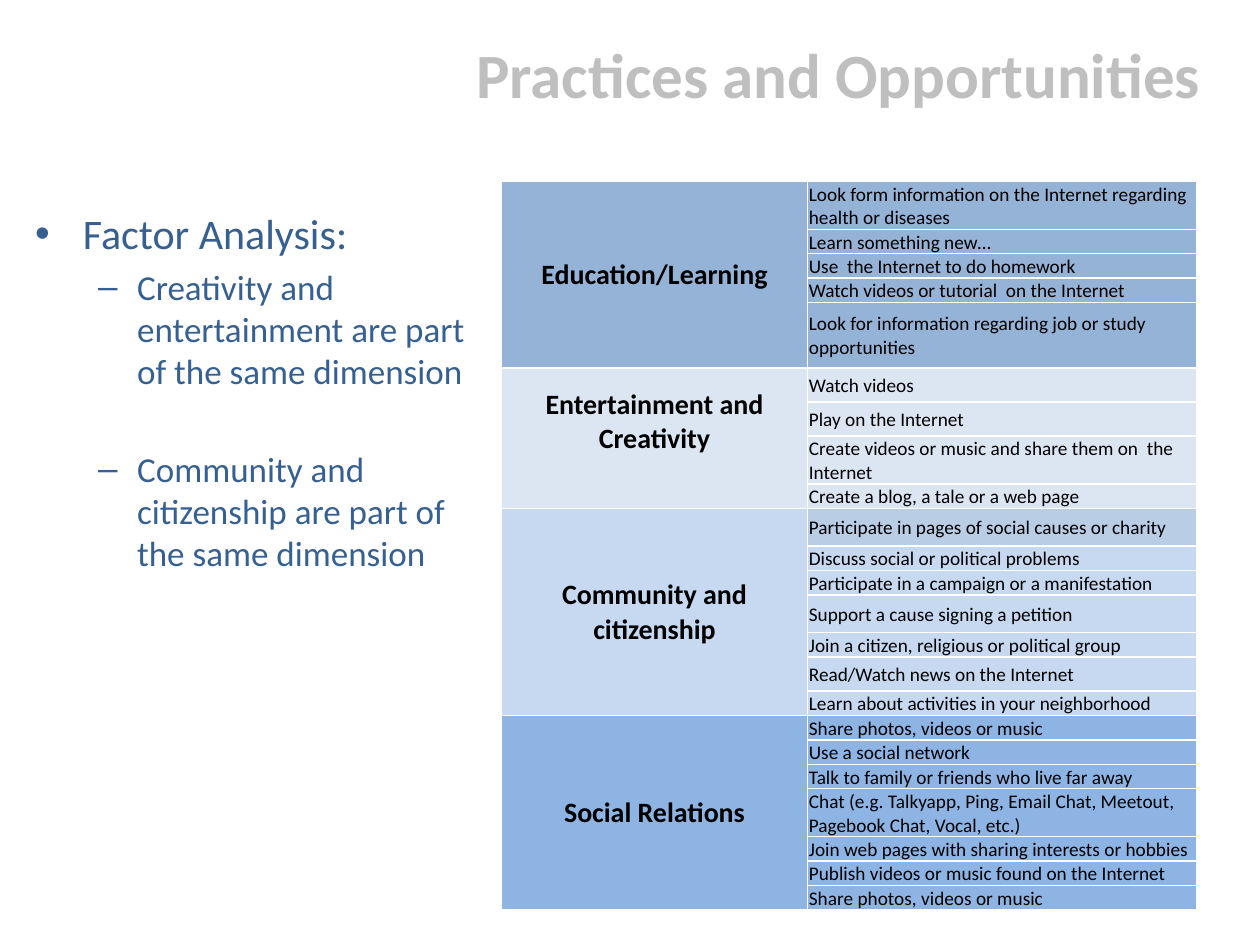
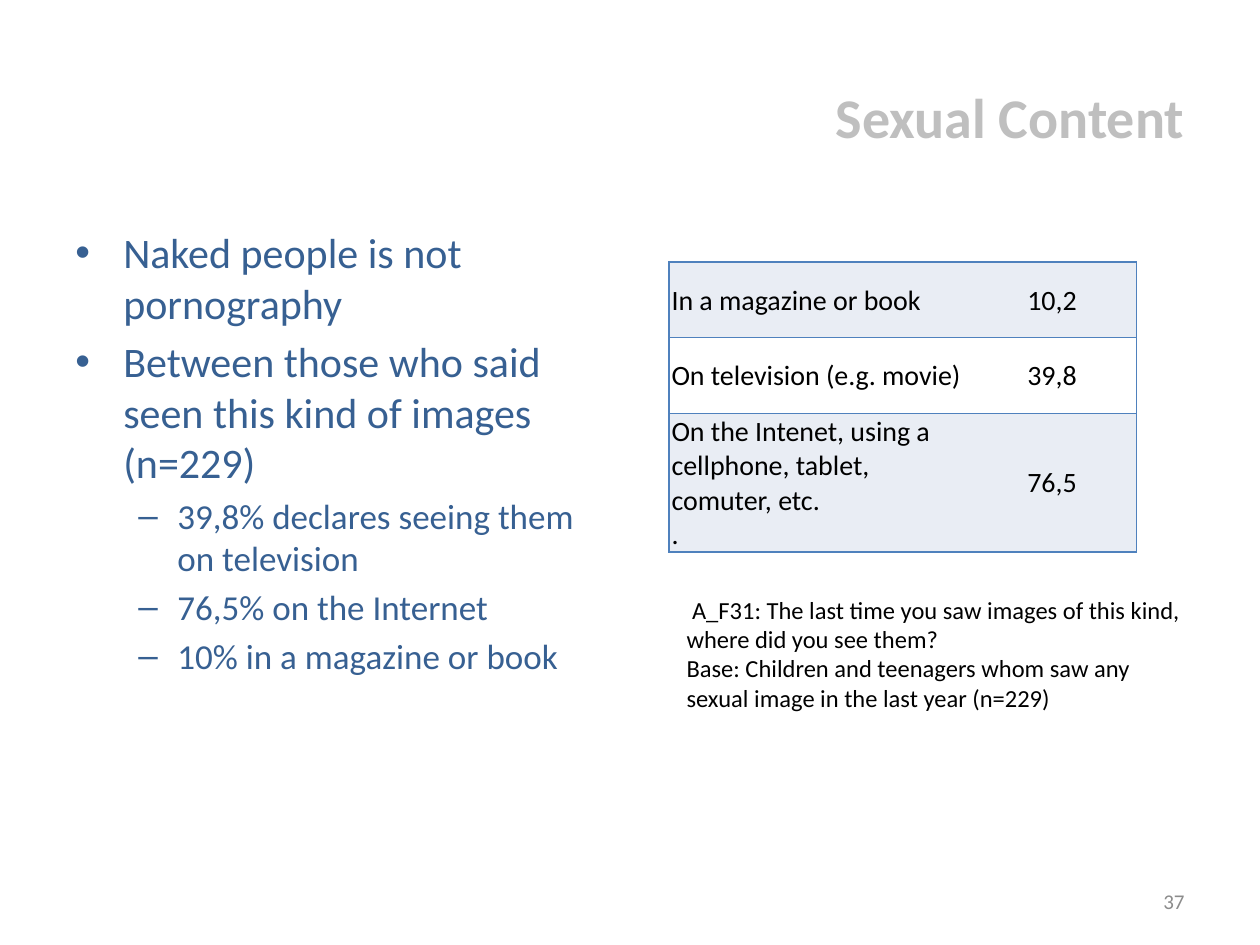
"""Build two slides: a factor analysis table and sources of sexual content."""
import pptx
import pptx.util
import pptx.dml.color
import pptx.enum.text
import pptx.oxml.ns
from lxml import etree

Pt = pptx.util.Pt
RGB = pptx.dml.color.RGBColor.from_string
ALIGN = pptx.enum.text.PP_ALIGN
MIDDLE = pptx.enum.text.MSO_ANCHOR.MIDDLE
BOTTOM = pptx.enum.text.MSO_ANCHOR.BOTTOM

THEME = {
    "font": "Calibri",
    "title": "BFBFBF", "body": "376092", "text": "000000", "number": "8C8C8C",
    "white": "FFFFFF", "line": "4F81BD", "band": "E9EDF4",
    "bullet_sizes": (24, 20), "group_size": 16, "item_size": 11,
    "caption_size": 14, "number_size": 12,
}
BULLETS = (("•", 0.38, 0.38), ("–", 0.81, 0.31))

prs = pptx.Presentation()
prs.slide_width = pptx.util.Inches(10)
prs.slide_height = pptx.util.Inches(7.5)
COL, ROW = prs.slide_width // 100, prs.slide_height // 75


def write(p, text, size, color, bold=False, **paragraph_format):
    """Fill one paragraph with one formatted run."""
    for name, value in paragraph_format.items():
        setattr(p, name, value)
    r = p.add_run()
    r.text = text
    for name, value in {"name": THEME["font"], "size": Pt(size), "bold": bold}.items():
        setattr(r.font, name, value)
    r.font.color.rgb = RGB(color)


def style_cell(cell, fill, inset, borders, anchor=MIDDLE, bottom=0):
    """Set fill, margins and the left, right, top and bottom borders of a cell."""
    cell.fill.solid()
    cell.fill.fore_color.rgb = RGB(fill)
    margins = {"margin_left": inset, "margin_right": inset, "margin_top": 0.01, "margin_bottom": bottom}
    for name, value in margins.items():
        setattr(cell, name, pptx.util.Inches(value))
    cell.vertical_anchor = anchor
    qn = pptx.oxml.ns.qn
    for i, (side, color) in enumerate(zip("LRTB", borders)):
        ln = etree.Element(qn(f"a:ln{side}"), w=str(Pt(1)))
        if color:
            solid = etree.SubElement(ln, qn("a:solidFill"))
            etree.SubElement(solid, qn("a:srgbClr"), val=color)
        else:
            etree.SubElement(ln, qn("a:noFill"))
        cell._tc.get_or_add_tcPr().insert(i, ln)


SLIDES = [
    ("Practices and Opportunities", 36, (14.5, 1.6, 81.8, 8.5), (1.8, 16, 36.1, 47.6), [
        (0, "Factor Analysis:", 0),
        (1, "Creativity and entertainment are part of the same dimension", 0),
        (1, "Community and citizenship are part of the same dimension", 28),
    ]),
    ("Sexual Content", 32, (5, 3, 90, 12.5), (5, 17.5, 43.1, 49.5), [
        (0, "Naked people is not pornography", 0),
        (0, "Between those who said seen this kind of images (n=229)", 0),
        (1, "39,8% declares seeing them on television", 0),
        (1, "76,5% on the Internet", 0),
        (1, "10% in a magazine or book", 0),
    ]),
]

for title, title_size, title_at, body_at, bullets in SLIDES:
    s = prs.slides.add_slide(prs.slide_layouts[5])
    sp = s.shapes.title
    for name, value, unit in zip(("left", "top", "width", "height"), title_at, (COL, ROW) * 2):
        setattr(sp, name, int(value * unit))
    sp.text_frame.vertical_anchor = MIDDLE
    write(sp.text_frame.paragraphs[0], title, title_size, THEME["title"], True, alignment=ALIGN.RIGHT)

    sp = s.shapes.add_textbox(*(int(v * u) for v, u in zip(body_at, (COL, ROW) * 2)))
    tf = sp.text_frame
    tf.word_wrap = True
    for i, (level, text, gap) in enumerate(bullets):
        p = tf.paragraphs[0] if i == 0 else tf.add_paragraph()
        size = THEME["bullet_sizes"][level]
        write(p, text, size, THEME["body"], level=level, space_before=Pt(0.2 * size + gap))
        mark, left, hang = BULLETS[level]
        pPr = p._p.get_or_add_pPr()
        pPr.set("marL", str(pptx.util.Inches(left)))
        pPr.set("indent", str(-pptx.util.Inches(hang)))
        etree.SubElement(pPr, pptx.oxml.ns.qn("a:buFont"), typeface="Arial")
        etree.SubElement(pPr, pptx.oxml.ns.qn("a:buChar"), char=mark)

practices, content = prs.slides

GROUPS = [
    ("Education/Learning", "95B3D7", 0, [
        ("Look form information on the Internet regarding health or diseases", 3.8),
        ("Learn something new…", 1.9),
        ("Use  the Internet to do homework", 1.9),
        ("Watch videos or tutorial  on the Internet", 1.9),
        ("Look for information regarding job or study opportunities", 5.2),
    ]),
    ("Entertainment and Creativity", "DCE6F2", 0.27, [
        ("Watch videos", 2.7),
        ("Play on the Internet", 2.7),
        ("Create videos or music and share them on  the Internet", 3.8),
        ("Create a blog, a tale or a web page", 1.9),
    ]),
    ("Community and citizenship", "C6D9F1", 0, [
        ("Participate in pages of social causes or charity", 3),
        ("Discuss social or political problems", 1.9),
        ("Participate in a campaign or a manifestation", 1.9),
        ("Support a cause signing a petition", 3),
        ("Join a citizen, religious or political group", 1.9),
        ("Read/Watch news on the Internet", 2.7),
        ("Learn about activities in your neighborhood", 1.9),
    ]),
    ("Social Relations", "8EB4E3", 0, [
        ("Share photos, videos or music", 1.9),
        ("Use a social network", 1.9),
        ("Talk to family or friends who live far away", 1.9),
        ("Chat (e.g. Talkyapp, Ping, Email Chat, Meetout, Pagebook Chat, Vocal, etc.)", 3.8),
        ("Join web pages with sharing interests or hobbies", 1.9),
        ("Publish videos or music found on the Internet", 1.9),
        ("Share photos, videos or music", 1.9),
    ]),
]
heights = [height for group in GROUPS for item, height in group[3]]
table = practices.shapes.add_table(
    len(heights), 2, int(39.8 * COL), int(14.4 * ROW), int(55.2 * COL), int(sum(heights) * ROW)).table
table.first_row = table.horz_banding = False
for column, width in zip(table.columns, (24.3, 30.9)):
    column.width = int(width * COL)
white = [THEME["white"]] * 4
row = 0
for group, fill, bottom, items in GROUPS:
    head = table.cell(row, 0)
    head.merge(table.cell(row + len(items) - 1, 0))
    write(head.text_frame.paragraphs[0], group, THEME["group_size"], THEME["text"], True,
          alignment=ALIGN.CENTER)
    for item, height in items:
        table.rows[row].height = int(height * ROW)
        style_cell(table.cell(row, 0), fill, 0.01, white, bottom=bottom)
        cell = table.cell(row, 1)
        style_cell(cell, "B9CDE5" if item.startswith("Participate in pages") else fill, 0.01, white)
        write(cell.text_frame.paragraphs[0], item, THEME["item_size"], THEME["text"])
        row += 1

SOURCES = [
    (["In a magazine or book"], "10,2", 6, THEME["band"], MIDDLE),
    (["On television (e.g. movie)"], "39,8", 6, THEME["white"], MIDDLE),
    (["On the Intenet, using a cellphone, tablet, comuter, etc.", "."], "76,5", 11, THEME["band"], BOTTOM),
]
table = content.shapes.add_table(
    len(SOURCES), 2, int(53.1 * COL), int(20.8 * ROW), int(37.1 * COL), 23 * ROW).table
table.first_row = table.horz_banding = False
for column, width in zip(table.columns, (23.7, 13.4)):
    column.width = int(width * COL)
line = THEME["line"]
for row, (lines, value, height, fill, anchor) in enumerate(SOURCES):
    table.rows[row].height = height * ROW
    source, share = table.cell(row, 0), table.cell(row, 1)
    style_cell(source, fill, 0.02, (line, None, line, line), anchor)
    style_cell(share, fill, 0.02, (None, line, line, line))
    for i, text in enumerate(lines):
        p = source.text_frame.add_paragraph() if i else source.text_frame.paragraphs[0]
        write(p, text, THEME["group_size"], THEME["text"])
    write(share.text_frame.paragraphs[0], value, THEME["group_size"], THEME["text"], alignment=ALIGN.CENTER)

CAPTION = [
    " A_F31: The last time you saw images of this kind, where did you see them?",
    "Base: Children and teenagers whom saw any sexual image in the last year (n=229)",
]
tf = content.shapes.add_textbox(int(53.5 * COL), int(46.7 * ROW), int(41.5 * COL), int(10.4 * ROW)).text_frame
tf.word_wrap = True
for i, text in enumerate(CAPTION):
    write(tf.add_paragraph() if i else tf.paragraphs[0], text, THEME["caption_size"], THEME["text"])

tf = content.shapes.add_textbox(int(71.7 * COL), int(69.5 * ROW), int(23.3 * COL), 4 * ROW).text_frame
tf.word_wrap = True
tf.vertical_anchor = MIDDLE
write(tf.paragraphs[0], "37", THEME["number_size"], THEME["number"], alignment=ALIGN.RIGHT)

prs.save("out.pptx")
